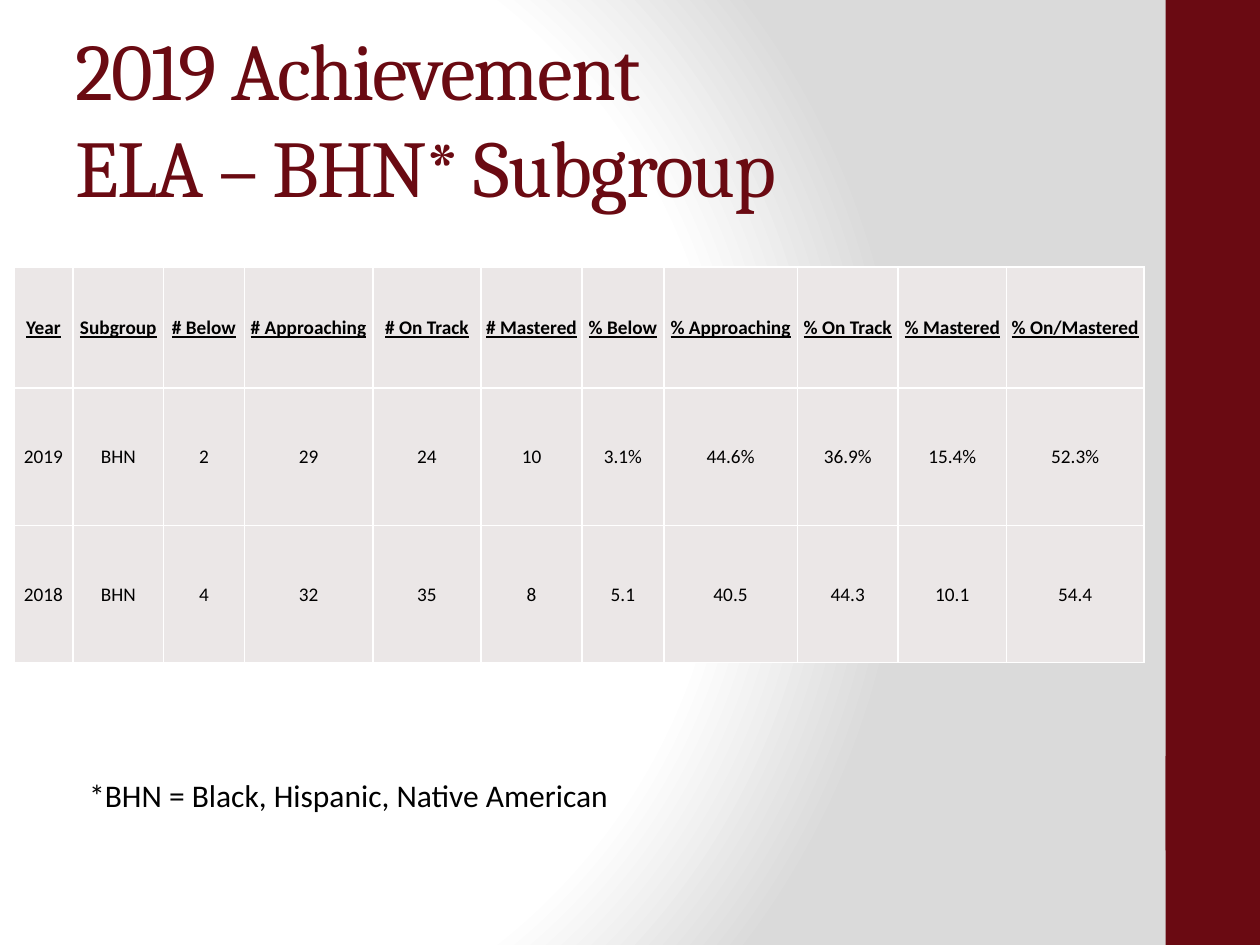
from dataclasses import dataclass

from pptx import Presentation
from pptx.dml.color import RGBColor
from pptx.enum.shapes import MSO_SHAPE as Shape
from pptx.enum.text import MSO_ANCHOR as Anchor, MSO_AUTO_SIZE as AutoSize, PP_ALIGN as Align
from pptx.oxml import parse_xml
from pptx.oxml.ns import nsdecls
from pptx.slide import Slide
from pptx.table import _Cell as Cell
from pptx.util import Inches, Pt


@dataclass(frozen=True)
class Theme:
    maroon: str = "6A0A12"
    black: str = "000000"
    white: str = "FFFFFF"
    gray: str = "DADADA"
    cell: str = "EBE7E7"
    heading_font: str = "Cambria"
    body_font: str = "Calibri"
    title_size: int = 46
    note_size: int = 18
    table_size: int = 11


@dataclass(frozen=True)
class Area:
    left: float
    top: float
    width: float
    height: float

    def lengths(self) -> tuple:
        return tuple(Inches(v) for v in (self.left, self.top, self.width, self.height))


@dataclass(frozen=True)
class Column:
    heading: str
    width: float
    values: tuple[str, str]


THEME = Theme()
BANDS = (Area(9.25, 0, 0.75, 7.5), Area(9.25, 6, 0.75, 0.75))
TITLE_LINES = ("2019 Achievement ", "ELA – BHN* Subgroup")
COLUMNS = (
    Column("Year", 0.47, ("2019", "2018")),
    Column("Subgroup", 0.72, ("BHN", "BHN")),
    Column("# Below", 0.64, ("2", "4")),
    Column("# Approaching", 1.02, ("29", "32")),
    Column("# On Track", 0.86, ("24", "35")),
    Column("# Mastered", 0.8, ("10", "8")),
    Column("% Below", 0.65, ("3.1%", "5.1")),
    Column("% Approaching", 1.06, ("44.6%", "40.5")),
    Column("% On Track", 0.8, ("36.9%", "44.3")),
    Column("% Mastered", 0.86, ("15.4%", "10.1")),
    Column("% On/Mastered", 1.09, ("52.3%", "54.4")),
)
ROW_HEIGHTS = (0.96, 1.09, 1.09)


def paint_background(page: Slide) -> None:
    """Fill the page with a circular gradient, which has no public method."""
    stops = "".join(
        f'<a:gs pos="{percent * 1000}"><a:srgbClr val="{color}"/></a:gs>'
        for percent, color in ((0, THEME.white), (75, THEME.white), (100, THEME.gray))
    )
    page.element.cSld.insert(0, parse_xml(
        f'<p:bg {nsdecls("p", "a")}><p:bgPr><a:gradFill rotWithShape="1">'
        f'<a:gsLst>{stops}</a:gsLst><a:path path="circle">'
        '<a:fillToRect l="20000" t="50000" r="100000" b="50000"/></a:path>'
        '</a:gradFill><a:effectLst/></p:bgPr></p:bg>'
    ))


def add_band(page: Slide, area: Area) -> None:
    band = page.shapes.add_shape(Shape.RECTANGLE, *area.lengths())
    band.shadow.inherit = False
    band.fill.solid()
    band.fill.fore_color.rgb = RGBColor.from_string(THEME.maroon)
    band.line.fill.background()


def add_span(para, text: str, size: int, font: str = THEME.body_font,
             color: str = THEME.black, emphasis: bool = False):
    """Add a run; emphasis makes it bold and underlined."""
    span = para.add_run()
    span.text = text
    span.font.name = font
    span.font.size = Pt(size)
    span.font.color.rgb = RGBColor.from_string(color)
    span.font.bold = span.font.underline = emphasis
    return span


def add_title(page: Slide) -> None:
    frame = page.shapes.add_textbox(*Area(0.5, 0.3, 8.33, 1.25).lengths()).text_frame
    frame.word_wrap = True
    frame.vertical_anchor = Anchor.MIDDLE
    para = frame.paragraphs[0]
    for index, line in enumerate(TITLE_LINES):
        if index:
            para.add_line_break()
        span = add_span(para, line, THEME.title_size, THEME.heading_font, THEME.maroon)
        span.font._element.set("spc", "-100")


def add_borders(cell: Cell) -> None:
    properties = cell._tc.get_or_add_tcPr()
    for index, side in enumerate(("lnL", "lnR", "lnT", "lnB")):
        properties.insert(index, parse_xml(
            f'<a:{side} {nsdecls("a")} w="{Pt(1)}"><a:solidFill>'
            f'<a:srgbClr val="{THEME.white}"/></a:solidFill></a:{side}>'
        ))


def fill_cell(cell: Cell, text: str, heading: bool) -> None:
    cell.fill.solid()
    cell.fill.fore_color.rgb = RGBColor.from_string(THEME.cell)
    cell.margin_left = cell.margin_right = cell.margin_top = Inches(0.01)
    cell.margin_bottom = 0
    cell.vertical_anchor = Anchor.MIDDLE
    para = cell.text_frame.paragraphs[0]
    para.alignment = Align.CENTER
    add_span(para, text, THEME.table_size, emphasis=heading)
    add_borders(cell)


def add_results(page: Slide) -> None:
    area = Area(0.11, 2.12, sum(c.width for c in COLUMNS), sum(ROW_HEIGHTS))
    table = page.shapes.add_table(len(ROW_HEIGHTS), len(COLUMNS), *area.lengths()).table
    for row, height in zip(table.rows, ROW_HEIGHTS):
        row.height = Inches(height)
    for x, column in enumerate(COLUMNS):
        table.columns[x].width = Inches(column.width)
        for y, text in enumerate((column.heading, *column.values)):
            fill_cell(table.cell(y, x), text, heading=y == 0)


def add_footnote(page: Slide) -> None:
    frame = page.shapes.add_textbox(*Area(0.61, 6.11, 4.37, 0.71).lengths()).text_frame
    frame.word_wrap = False
    frame.auto_size = AutoSize.SHAPE_TO_FIT_TEXT
    add_span(frame.paragraphs[0], "*BHN = Black, Hispanic, Native American", THEME.note_size)


def main() -> None:
    deck = Presentation()
    deck.slide_width, deck.slide_height = Inches(10), Inches(7.5)
    page = deck.slides.add_slide(deck.slide_layouts[6])
    paint_background(page)
    for band in BANDS:
        add_band(page, band)
    add_title(page)
    add_results(page)
    add_footnote(page)
    deck.save("out.pptx")


if __name__ == "__main__":
    main()
